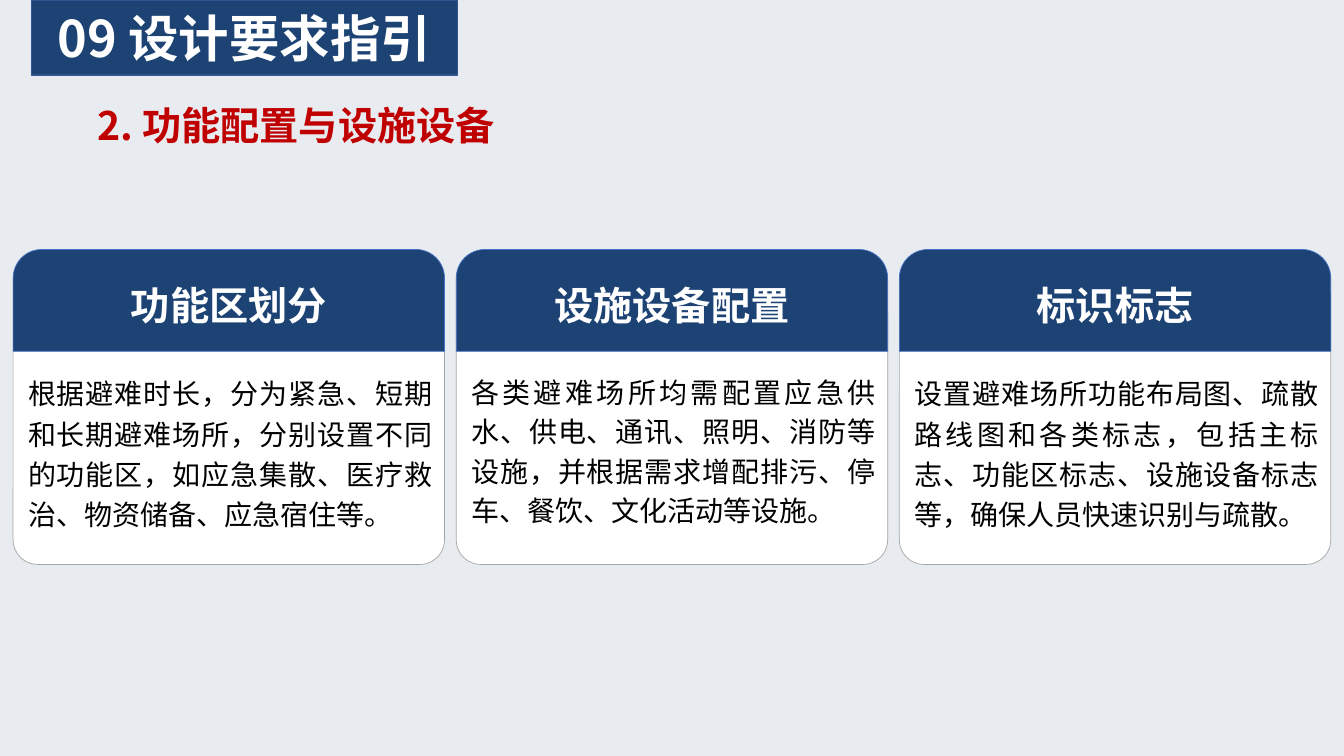
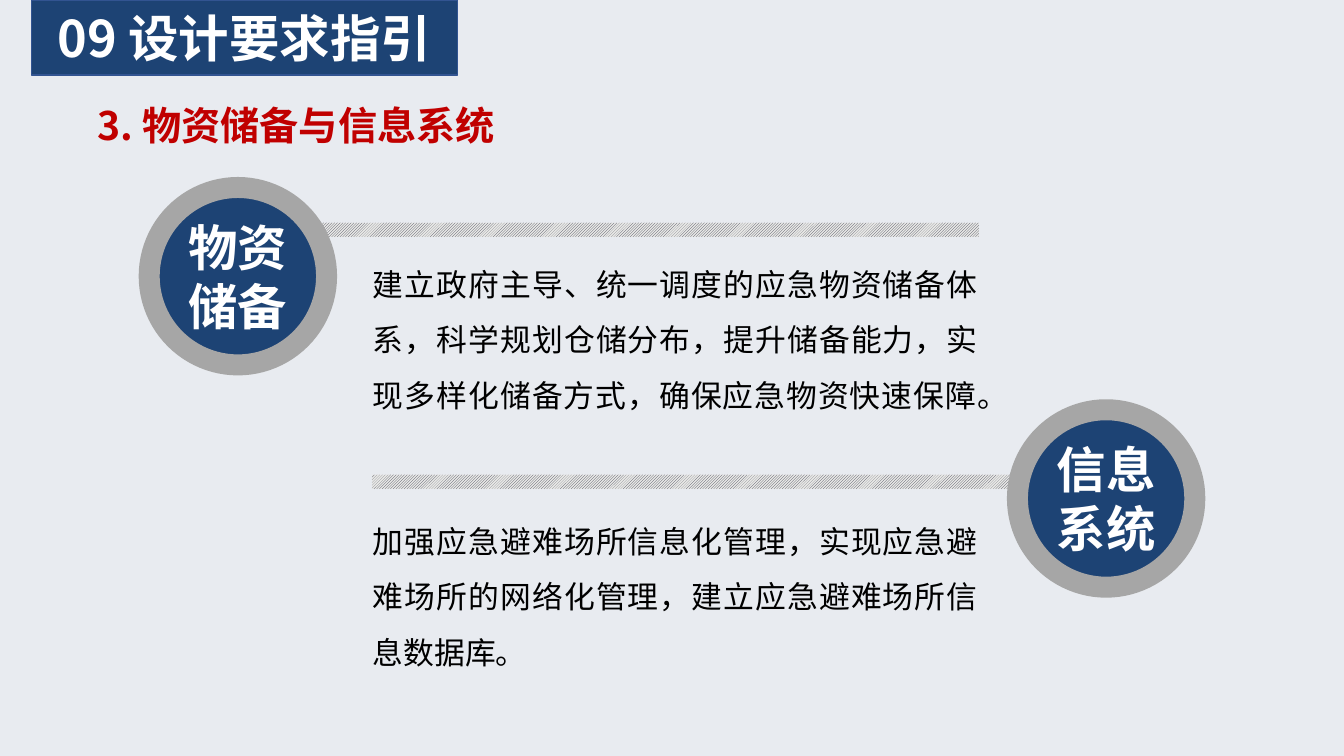
import lxml.etree
import pptx
import pptx.dml.color
import pptx.enum.dml
import pptx.enum.shapes
import pptx.enum.text
import pptx.oxml.ns
import pptx.util

FONT = "Noto Sans CJK SC"
NAVY, RED, WHITE, BLACK = "1D4374", "C00000", "FFFFFF", "000000"
PALE, GRAY = "E8EBF0", "A6A6A6"
SHAPES = pptx.enum.shapes.MSO_SHAPE
ALIGN = pptx.enum.text.PP_ALIGN
rgb = pptx.dml.color.RGBColor.from_string

presentation = pptx.Presentation()
presentation.slide_width = pptx.util.Inches(13.33)
presentation.slide_height = pptx.util.Inches(7.5)
blank_layout = presentation.slide_layouts[6]

# Every length is a share of the slide: 100 columns by 100 rows
COLUMN = presentation.slide_width / 100
ROW = presentation.slide_height / 100


def add_box(slide, kind, left, top, width, height, fill=None, line=None, line_width=0.5):
    """Place a preset shape, or a text box if kind is None."""
    place = [int(left * COLUMN), int(top * ROW), int(width * COLUMN), int(height * ROW)]
    if kind is None:
        return slide.shapes.add_textbox(*place)
    shape = slide.shapes.add_shape(kind, *place)
    shape.shadow.inherit = False
    if fill:
        shape.fill.solid()
        shape.fill.fore_color.rgb = rgb(fill)
    if line:
        shape.line.color.rgb = rgb(line)
        shape.line.width = pptx.util.Pt(line_width)
    else:
        shape.line.fill.background()
    return shape


def write(shape, text, size, color, bold=False, align=ALIGN.CENTER, spacing=None):
    """Fill a shape with one paragraph and return it."""
    frame = shape.text_frame
    frame.word_wrap = True
    if align == ALIGN.CENTER:
        frame.vertical_anchor = pptx.enum.text.MSO_ANCHOR.MIDDLE
    paragraph = frame.paragraphs[0]
    paragraph.alignment = align
    paragraph.line_spacing = spacing
    run = paragraph.add_run()
    run.text = text
    run.font.name = FONT
    run.font.size = pptx.util.Pt(size)
    run.font.bold = bold
    run.font.color.rgb = rgb(color)
    east_asian = lxml.etree.SubElement(run._r.get_or_add_rPr(), pptx.oxml.ns.qn("a:ea"))
    east_asian.set("typeface", FONT)
    return paragraph


# Shared backdrop, title band and section heading
slides = []
for heading in ["2. 功能配置与设施设备", "3. 物资储备与信息系统"]:
    slide = presentation.slides.add_slide(blank_layout)
    add_box(slide, SHAPES.RECTANGLE, -1, -1.87, 102.25, 103.2, PALE, PALE, 1)
    band = add_box(slide, SHAPES.RECTANGLE, 2.33, 0, 31.7, 9.95, NAVY, "325491", 1)
    write(band, "09 设计要求指引", 36, WHITE, True)
    heading_box = add_box(slide, None, 3.6, 13.73, 37.6, 6.53)
    paragraph = write(heading_box, heading, 28, RED, True,
                      ALIGN.JUSTIFY, pptx.util.Pt(28))
    paragraph.space_before = paragraph.space_after = pptx.util.Pt(6)
    paragraph._p.get_or_add_pPr().set("indent", str(pptx.util.Inches(0.39)))
    slides.append(slide)
cards_slide, systems_slide = slides

# Three equal cards
cards = [
    ("功能区划分", 1.2,
     "根据避难时长，分为紧急、短期和长期避难场所，分别设置不同的功能区，"
     "如应急集散、医疗救治、物资储备、应急宿住等。"),
    ("设施设备配置", pptx.util.Pt(28),
     "各类避难场所均需配置应急供水、供电、通讯、照明、消防等设施，"
     "并根据需求增配排污、停车、餐饮、文化活动等设施。"),
    ("标识标志", 1.2,
     "设置避难场所功能布局图、疏散路线图和各类标志，包括主标志、"
     "功能区标志、设施设备标志等，确保人员快速识别与疏散。"),
]
margin, gap = 0.98, 0.87
card_width = (100 - 2 * margin - (len(cards) - 1) * gap) / len(cards)
for index, (title, spacing, body) in enumerate(cards):
    left = margin + index * (card_width + gap)
    panel = add_box(cards_slide, SHAPES.ROUNDED_RECTANGLE,
                    left, 33.87, card_width, 40.8, WHITE, GRAY)
    panel.adjustments[0] = 0.08
    header = add_box(cards_slide, SHAPES.ROUND_2_SAME_RECTANGLE,
                     left, 33, card_width, 13.47, NAVY, "4472C4")
    header.adjustments[0] = 0.28
    write(header, title, 28, WHITE, True)
    body_box = add_box(cards_slide, None, left + 0.37, 48.3, 31.58, 22.4)
    paragraph = write(body_box, body, 20, BLACK, align=ALIGN.JUSTIFY, spacing=spacing)
    paragraph._p.get_or_add_pPr().set("hangingPunct", "0")

# Two systems: hatched bar, ringed circle and text
systems = [
    ("物资储备", 23.1, 29.47, 11.1, 24.8, 31.87,
     "建立政府主导、统一调度的应急物资储备体系，科学规划仓储分布，"
     "提升储备能力，实现多样化储备方式，确保应急物资快速保障。"),
    ("信息系统", 27.68, 62.8, 75.7, 54.2, 65.87,
     "加强应急避难场所信息化管理，实现应急避难场所的网络化管理，"
     "建立应急避难场所信息数据库。"),
]
for name, bar_left, bar_top, circle_left, circle_top, text_top, body in systems:
    bar = add_box(systems_slide, SHAPES.RECTANGLE, bar_left, bar_top, 49.74, 1.87)
    bar.fill.patterned()
    bar.fill.pattern = pptx.enum.dml.MSO_PATTERN.LIGHT_UPWARD_DIAGONAL
    bar.fill.fore_color.rgb = rgb("414455")
    bar.fill.back_color.rgb = rgb("E8E8E6")

    circle = add_box(systems_slide, SHAPES.OVAL, circle_left, circle_top,
                     13.2, 23.47, NAVY, GRAY, 15)
    write(circle, name, 35.3, WHITE, True)

    body_box = add_box(systems_slide, None, 26.78, text_top, 46.95, 23.07)
    frame = body_box.text_frame
    frame.margin_left = frame.margin_right = pptx.util.Inches(0.13)
    frame.margin_top = frame.margin_bottom = pptx.util.Inches(0.06)
    write(body_box, body, 22, BLACK, align=ALIGN.JUSTIFY, spacing=1.5)

presentation.save("out.pptx")
